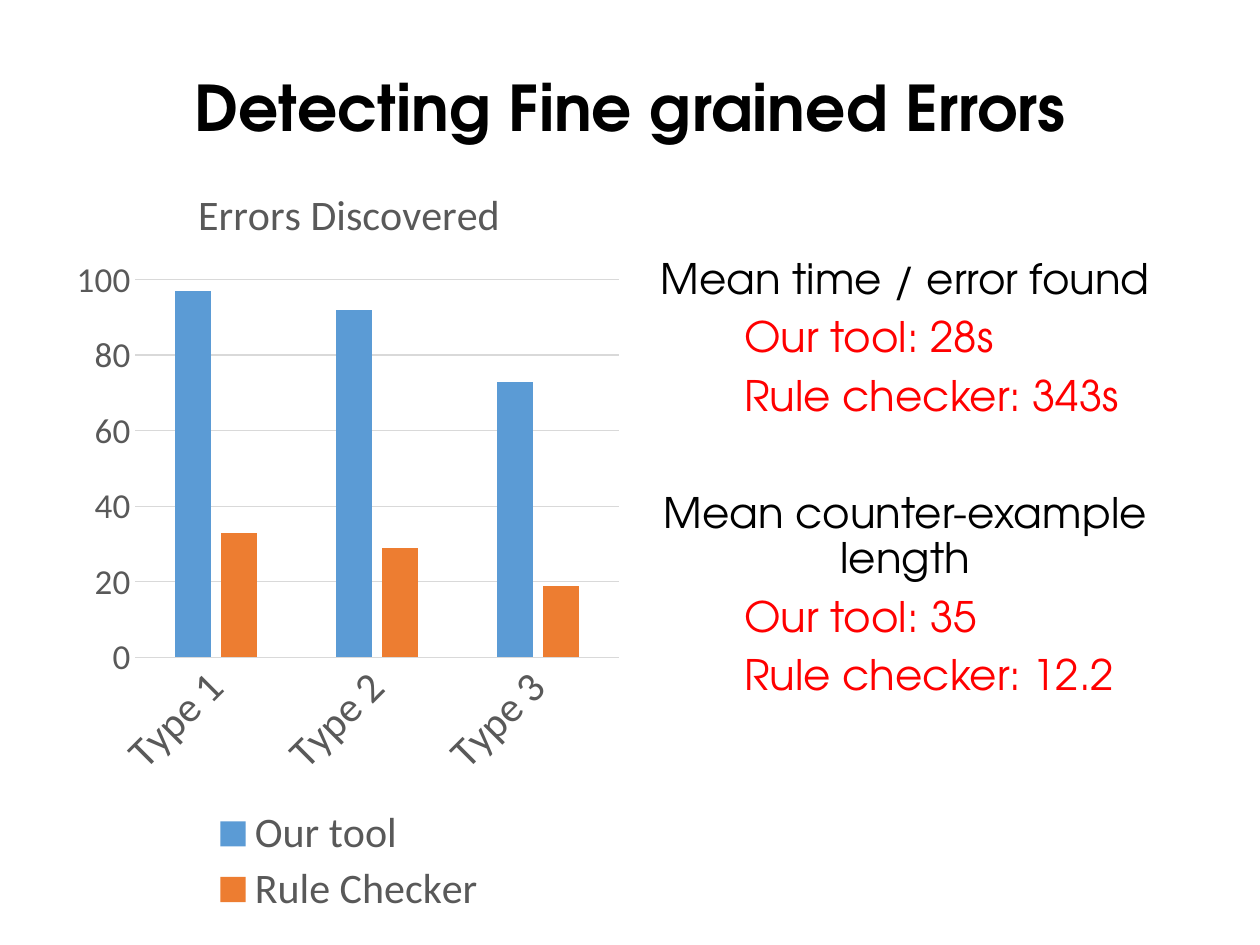
"""Build a slide that compares error detection by two grammar tools."""
from pptx import Presentation
from pptx.chart.data import CategoryChartData
from pptx.dml.color import RGBColor
from pptx.enum.chart import XL_CHART_TYPE, XL_LEGEND_POSITION, XL_TICK_MARK
from pptx.enum.text import MSO_ANCHOR, PP_ALIGN
from pptx.oxml import parse_xml
from pptx.oxml.ns import nsdecls, qn
from pptx.util import Inches, Pt

COLUMNS = XL_CHART_TYPE.COLUMN_CLUSTERED
BOTTOM_LEGEND = XL_LEGEND_POSITION.BOTTOM
NO_TICKS = XL_TICK_MARK.NONE
CENTER, LEFT = PP_ALIGN.CENTER, PP_ALIGN.LEFT
BOTTOM = MSO_ANCHOR.BOTTOM

COLORS = {"text": "000000", "result": "FF0000", "label": "595959",
          "grid": "D9D9D9", "tool": "5B9BD5", "checker": "ED7D31"}
TEXT_FONT, CHART_FONT = "TeX Gyre Adventor", "Calibri"
CATEGORIES = ["Type 1", "Type 2", "Type 3"]
SERIES = [("Our tool", [97, 92, 73], "tool"),
          ("Rule Checker", [33, 29, 19], "checker")]
FINDINGS = [
    ("Mean time / error found", ["Our tool: 28s", "Rule checker: 343s"]),
    ("Mean counter-example length", ["Our tool: 35", "Rule checker: 12.2"]),
]


def apply(target, values):
    """Set each attribute named in a dict of format values."""
    for name, value in values.items():
        setattr(target, name, value)


def place(parent, index, **fractions):
    """Give a chart part a manual layout in fractions of the chart."""
    old = parent.find(qn("c:layout"))
    if old is not None:
        parent.remove(old)
    target = '<c:layoutTarget val="inner"/>' if index == 0 else ""
    modes = '<c:xMode val="edge"/><c:yMode val="edge"/>'
    sizes = "".join(f'<c:{key} val="{value}"/>' for key, value in fractions.items())
    parent.insert(index, parse_xml(
        f'<c:layout {nsdecls("c")}><c:manualLayout>{target}{modes}{sizes}'
        "</c:manualLayout></c:layout>"))


class SlideBuilder:
    """Hold the style and the current slide."""

    def __init__(self, deck):
        self.page = deck.slides.add_slide(deck.slide_layouts[5])

    def style(self, font, size, color, name=CHART_FONT, bold=False):
        """Format a font."""
        apply(font, {"name": name, "size": Pt(size), "bold": bold})
        font.color.rgb = RGBColor.from_string(COLORS[color])

    def line(self, line_format):
        """Draw a thin grid line."""
        line_format.color.rgb = RGBColor.from_string(COLORS["grid"])
        line_format.width = Pt(0.75)

    def title(self, text, left, top, width, height):
        """Fill and move the title placeholder."""
        box = self.page.shapes.title
        apply(box, {"left": Inches(left), "top": Inches(top),
                    "width": Inches(width), "height": Inches(height)})
        margins = ("margin_left", "margin_top", "margin_right", "margin_bottom")
        apply(box.text_frame, dict.fromkeys(margins, Inches(0.1)))
        apply(box.text_frame, {"vertical_anchor": BOTTOM, "word_wrap": True})
        para = box.text_frame.paragraphs[0]
        para.alignment = CENTER
        span = para.add_run()
        span.text = text
        self.style(span.font, 36, "text", TEXT_FONT, True)

    def findings(self, groups, left, top, width, height):
        """Write centred headings with indented results."""
        box = self.page.shapes.add_textbox(
            Inches(left), Inches(top), Inches(width), Inches(height))
        frame = box.text_frame
        frame.word_wrap = True
        for number, (heading, results) in enumerate(groups):
            para = frame.add_paragraph() if number else frame.paragraphs[0]
            self.finding(para, heading, "text", CENTER, 41 if number else 7.5)
            for result in results:
                para = frame.add_paragraph()
                self.finding(para, result, "result", LEFT, 7.5)
                para._p.get_or_add_pPr().set("marL", str(Inches(0.75)))

    def finding(self, para, text, color, alignment, space):
        """Write one paragraph of the findings."""
        apply(para, {"alignment": alignment, "line_spacing": 0.9,
                     "space_before": Pt(space)})
        span = para.add_run()
        span.text = text
        self.style(span.font, 24, color, TEXT_FONT)

    def chart(self, heading, left, top, width, height):
        """Add the clustered column chart."""
        data = CategoryChartData()
        data.categories = CATEGORIES
        for name, values, _ in SERIES:
            data.add_series(name, values)
        chart = self.page.shapes.add_chart(
            COLUMNS, Inches(left), Inches(top), Inches(width), Inches(height),
            data).chart
        self.style(chart.font, 10, "text")
        apply(chart, {"has_title": True, "has_legend": True})
        para = chart.chart_title.text_frame.paragraphs[0]
        span = para.add_run()
        span.text = heading
        self.style(span.font, 24, "label")
        self.columns(chart.plots[0])
        self.axes(chart.category_axis, chart.value_axis)
        apply(chart.legend, {"position": BOTTOM_LEGEND, "include_in_layout": False})
        self.style(chart.legend.font, 24, "label")
        plot_area = chart._chartSpace.chart.plotArea
        place(plot_area, 0, x=0.12, y=0.16, w=0.86, h=0.49)
        place(chart.legend._element, 1, x=0.25, y=0.84, w=0.5, h=0.15)

    def columns(self, plot):
        """Space and colour the columns."""
        apply(plot, {"gap_width": 219, "overlap": -27, "vary_by_categories": False})
        for series, (_, _, color) in zip(plot.series, SERIES):
            series.format.fill.solid()
            series.format.fill.fore_color.rgb = RGBColor.from_string(COLORS[color])

    def axes(self, category, value):
        """Format both axes."""
        for axis, size in ((category, 24), (value, 20)):
            apply(axis, {"major_tick_mark": NO_TICKS, "minor_tick_mark": NO_TICKS})
            self.style(axis.tick_labels.font, size, "label")
        self.line(category.format.line)
        category._element.find(qn("c:txPr")).find(qn("a:bodyPr")).set("rot", "-2700000")
        apply(value, {"minimum_scale": 0, "maximum_scale": 100, "major_unit": 20,
                      "has_major_gridlines": True})
        value.format.line.fill.background()
        self.line(value.major_gridlines.format.line)


def main():
    """Build and save the deck."""
    deck = Presentation()
    apply(deck, {"slide_width": Inches(10), "slide_height": Inches(7.5)})
    slide = SlideBuilder(deck)
    slide.title("Detecting Fine grained Errors", 0.69, 0.4, 8.62, 0.84)
    slide.findings(FINDINGS, 5.06, 2, 4.25, 4.76)
    slide.chart("Errors Discovered", 0.54, 1.24, 4.46, 6.12)
    deck.save("out.pptx")


if __name__ == "__main__":
    main()
